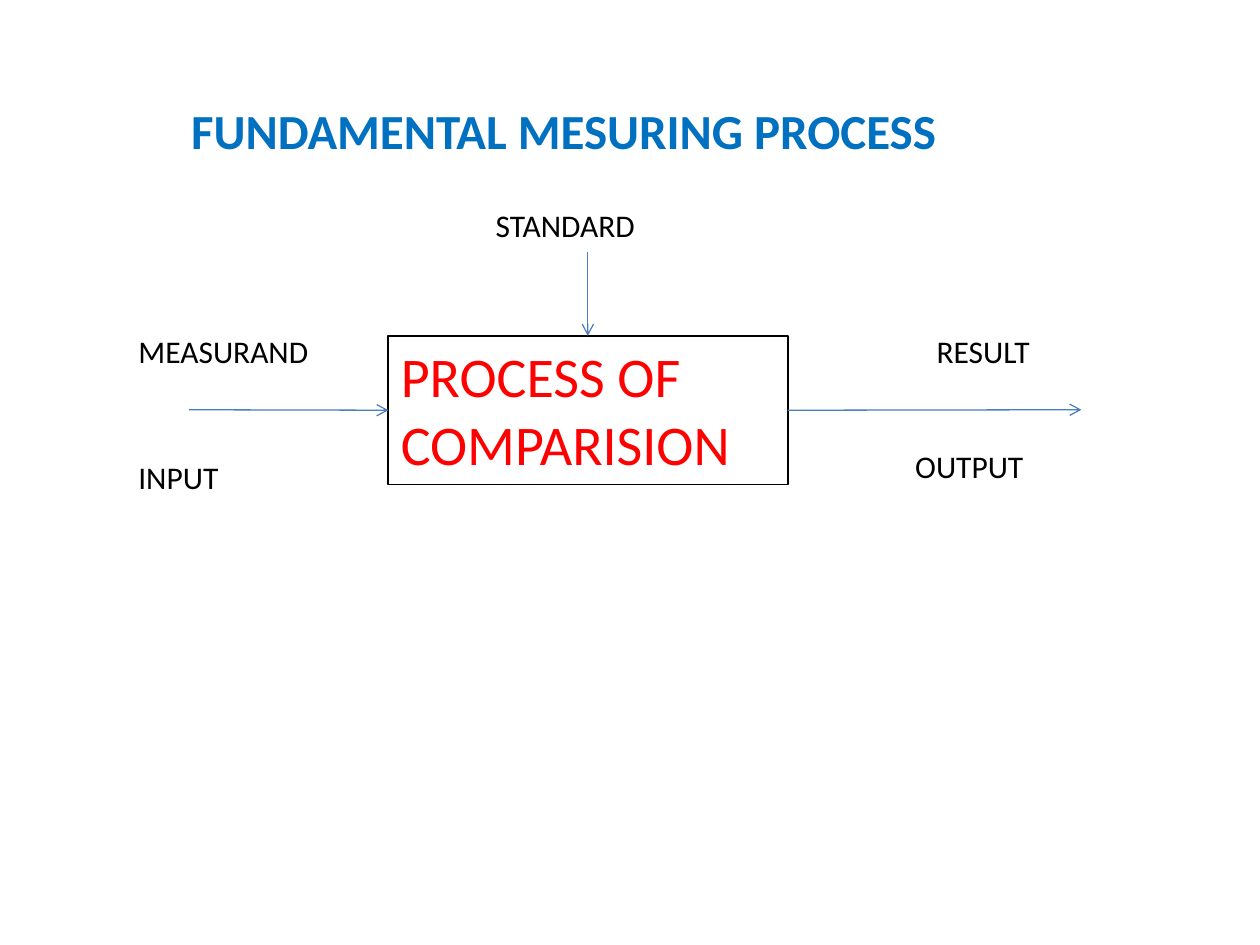
"""Builds a slide showing the fundamental measuring process as a block diagram."""
from lxml import etree
from pptx import Presentation
from pptx.dml.color import RGBColor
from pptx.enum.shapes import MSO_CONNECTOR, MSO_SHAPE
from pptx.enum.text import MSO_ANCHOR, PP_ALIGN
from pptx.oxml.ns import qn
from pptx.util import Cm, Pt

STRAIGHT = MSO_CONNECTOR.STRAIGHT
RECTANGLE = MSO_SHAPE.RECTANGLE
TOP = MSO_ANCHOR.TOP
LEFT = PP_ALIGN.LEFT
COLOURS = {"title": "0070C0", "process": "FF0000", "text": "000000", "arrow": "4B7EBC"}


def write(shape, text, size, colour, bold=False):
    frame = shape.text_frame
    frame.word_wrap = True
    frame.vertical_anchor = TOP
    frame.text = text
    para = frame.paragraphs[0]
    para.alignment = LEFT
    para.font.name = "Calibri"
    para.font.size = Pt(size)
    para.font.bold = bold
    para.font.color.rgb = RGBColor.from_string(COLOURS[colour])


deck = Presentation()
deck.slide_width, deck.slide_height = Cm(25.4), Cm(19.05)
page = deck.slides.add_slide(deck.slide_layouts[5])

title = page.shapes.title
title.left, title.top, title.width, title.height = Cm(3.6), Cm(1.9), Cm(19.05), Cm(1.45)
write(title, "FUNDAMENTAL MESURING PROCESS", 28, "title", bold=True)

process = page.shapes.add_shape(RECTANGLE, Cm(7.83), Cm(6.77), Cm(8.05), Cm(3))
process.shadow.inherit = False
process.fill.background()
process.line.color.rgb = RGBColor.from_string(COLOURS["text"])
process.line.width = Pt(1)
write(process, "PROCESS OF COMPARISION", 32, "process")

labels = [
    ("MEASURAND", 2.54, 6.56, 4.45),
    ("INPUT", 2.54, 9.1, 4),
    ("STANDARD", 9.74, 4.02, 4.23),
    ("OUTPUT", 18.2, 8.89, 4),
    ("RESULT", 18.63, 6.56, 4),
]
for text, left, top, width in labels:
    box = page.shapes.add_textbox(Cm(left), Cm(top), Cm(width), Cm(1.03))
    write(box, text, 18, "text")

arrows = [
    (3.81, 8.26, 7.83, 8.27),
    (15.88, 8.27, 21.8, 8.26),
    (11.85, 5.08, 11.85, 6.77),
]
for ends in arrows:
    arrow = page.shapes.add_connector(STRAIGHT, *map(Cm, ends))
    arrow.line.color.rgb = RGBColor.from_string(COLOURS["arrow"])
    arrow.line.width = Pt(0.75)
    etree.SubElement(arrow.line._get_or_add_ln(), qn("a:tailEnd"), type="arrow")
    etree.SubElement(arrow._element.spPr, qn("a:effectLst"))

deck.save("out.pptx")
